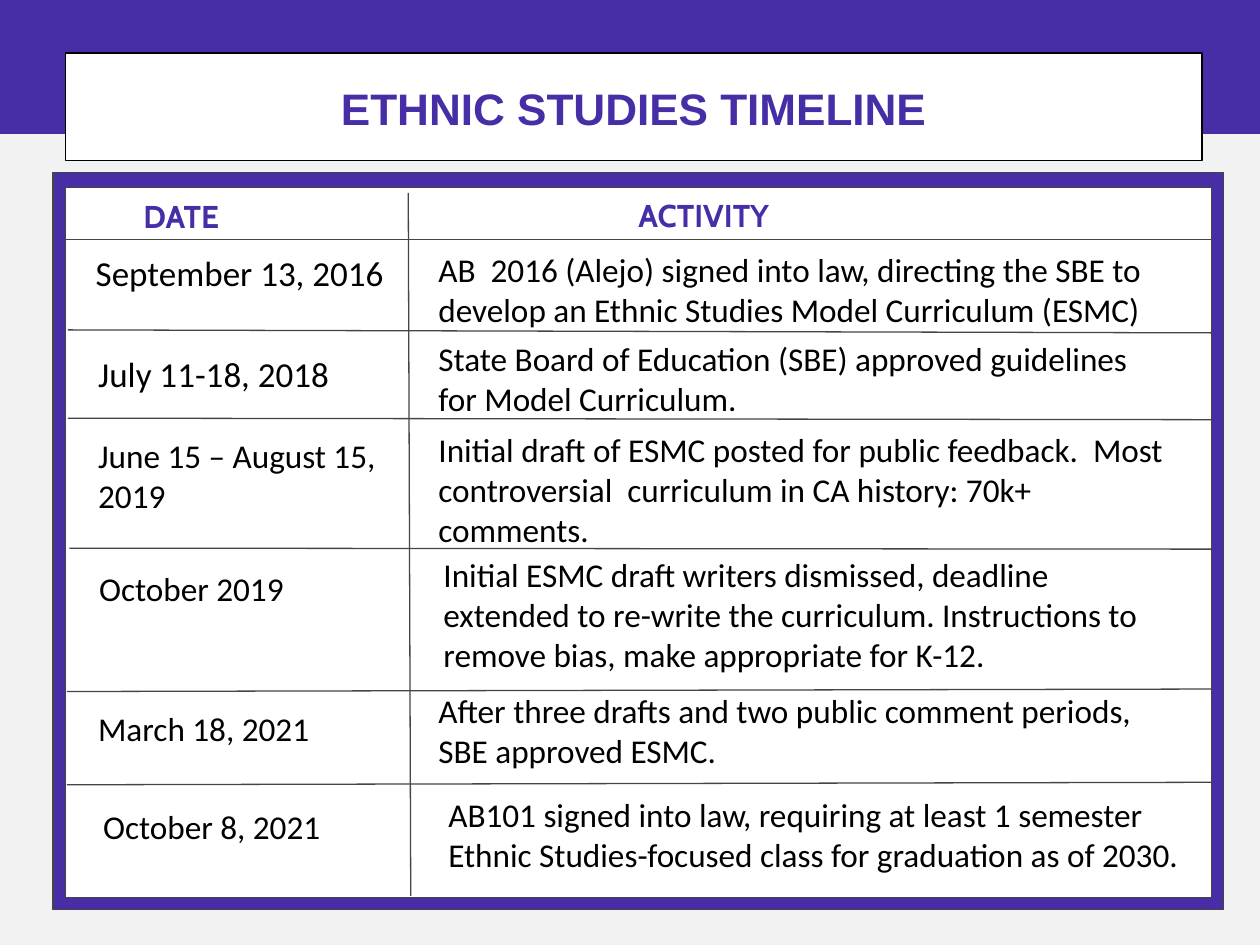
from lxml import etree
from pptx import Presentation
from pptx.dml.color import RGBColor
from pptx.enum.shapes import MSO_CONNECTOR, MSO_SHAPE
from pptx.enum.text import MSO_ANCHOR, MSO_AUTO_SIZE, PP_ALIGN
from pptx.oxml.ns import qn
from pptx.util import Cm, Pt

RECTANGLE = MSO_SHAPE.RECTANGLE
STRAIGHT = MSO_CONNECTOR.STRAIGHT
TOP, MIDDLE = MSO_ANCHOR.TOP, MSO_ANCHOR.MIDDLE
LEFT, CENTER = PP_ALIGN.LEFT, PP_ALIGN.CENTER
NO_FIT = MSO_AUTO_SIZE.NONE

PURPLE, GRAY, PALE = "472EA7", "454545", "F2F2F2"
WHITE, BLACK = "FFFFFF", "000000"
TITLE_ONLY = 5
LINE_HEIGHT = 0.84

# Date, its left, top, width and size; activity, its left, top, width and height
ROWS = [
    ("September 13, 2016", (1.68, 4.83, 6.63), 20,
     "AB  2016 (Alejo) signed into law, directing the SBE to develop "
     "an Ethnic Studies Model Curriculum (ESMC)", (8.59, 4.78, 15.42, LINE_HEIGHT)),
    ("July 11-18, 2018", (1.73, 6.86, 6.27), 20,
     "State Board of Education (SBE) approved guidelines for Model Curriculum.",
     (8.59, 6.58, 14.76, LINE_HEIGHT)),
    ("June 15 – August 15, 2019", (1.73, 8.53, 6.27), 19,
     "Initial draft of ESMC posted for public feedback.  Most controversial  "
     "curriculum in CA history: 70k+ comments.", (8.59, 8.41, 15.42, LINE_HEIGHT)),
    ("October 2019", (1.75, 11.2, 6.27), 19,
     "Initial ESMC draft writers dismissed, deadline extended to re-write the "
     "curriculum. Instructions to remove bias, make appropriate for K-12.",
     (8.69, 10.92, 15.19, 3.05)),
    ("March 18, 2021", (1.73, 14.02, 6.27), 19,
     "After three drafts and two public comment periods, SBE approved ESMC.",
     (8.59, 13.67, 14.76, 2.16)),
    ("October 8, 2021", (1.83, 16.0, 5.72), 19,
     "AB101 signed into law, requiring at least 1 semester Ethnic Studies-focused "
     "class for graduation as of 2030.", (8.79, 15.77, 15.42, 2.16)),
]

# Start and end of the column rule, then of the row rules
RULES = [
    (8.23, 3.89, 8.28, 18.06),
    (1.37, 6.65, 24.41, 6.71),
    (1.37, 8.43, 24.41, 8.46),
    (1.4, 11.05, 24.43, 11.07),
    (1.35, 13.94, 24.46, 13.89),
    (1.35, 15.82, 24.46, 15.77),
]


def color(value):
    return RGBColor.from_string(value)


def write(frame, text, size=19, font="Calibri", ink=BLACK, bold=False,
          align=LEFT, anchor=TOP, spacing=1.0, insets=(0.25, 0.25, 0.25, 0.25)):
    frame.word_wrap = True
    frame.auto_size = NO_FIT
    frame.vertical_anchor = anchor
    (frame.margin_left, frame.margin_top,
     frame.margin_right, frame.margin_bottom) = map(Cm, insets)
    para = frame.paragraphs[0]
    para.alignment = align
    para.line_spacing = spacing
    span = para.add_run()
    span.text = text
    span.font.size = Pt(size)
    span.font.name = font
    span.font.bold = bold
    span.font.color.rgb = color(ink)


class SlideBuilder:
    def __init__(self, page, line_width=0.75):
        self.page = page
        self.line_width = line_width

    def background(self, fill):
        self.page.background.fill.solid()
        self.page.background.fill.fore_color.rgb = color(fill)

    def paint(self, shape, fill, line):
        shape.fill.solid()
        shape.fill.fore_color.rgb = color(fill)
        shape.line.color.rgb = color(line)
        shape.line.width = Pt(self.line_width)

    def title(self, text, place, fill, line, **style):
        box = self.page.shapes.title
        box.left, box.top, box.width, box.height = map(Cm, place)
        self.paint(box, fill, line)
        write(box.text_frame, text, **style)
        # Bring the title in front of what is drawn so far
        box.element.getparent().append(box.element)

    def panel(self, place, fill, line):
        shape = self.page.shapes.add_shape(RECTANGLE, *map(Cm, place))
        shape.shadow.inherit = False
        self.paint(shape, fill, line)

    def text(self, text, place, **style):
        box = self.page.shapes.add_textbox(*map(Cm, place))
        write(box.text_frame, text, **style)

    def rule(self, ends, line):
        connector = self.page.shapes.add_connector(STRAIGHT, *map(Cm, ends))
        connector.line.color.rgb = color(line)
        connector.line.width = Pt(self.line_width)
        properties = connector.element.find(qn("p:spPr"))
        etree.SubElement(properties, qn("a:effectLst"))


def main():
    deck = Presentation()
    deck.slide_width, deck.slide_height = Cm(25.4), Cm(19.05)
    page = deck.slides.add_slide(deck.slide_layouts[TITLE_ONLY])
    builder = SlideBuilder(page)

    # Top band and title
    builder.background(PALE)
    builder.panel((0, 0, 25.4, 2.69), PURPLE, PURPLE)
    builder.title("ETHNIC STUDIES TIMELINE", (1.32, 1.07, 22.91, 2.16), WHITE, BLACK,
                  size=25.2, font="Arial", ink=PURPLE, bold=True, align=CENTER,
                  anchor=MIDDLE, spacing=0.9, insets=(0.5, 0.7, 0.5, 0.5))

    # Frame and column headings
    heading = {"size": 18, "font": "Cabin", "ink": PURPLE, "bold": True}
    builder.panel((1.07, 3.48, 23.6, 14.86), PURPLE, GRAY)
    builder.panel((1.32, 3.78, 23.11, 1.09), WHITE, GRAY)
    builder.text("DATE", (2.64, 3.73, 3.68, LINE_HEIGHT), **heading)
    builder.text("ACTIVITY", (12.62, 3.71, 6.63, LINE_HEIGHT), **heading)

    # Timeline rows
    builder.panel((1.32, 4.83, 23.11, 13.26), WHITE, GRAY)
    for date, date_place, date_size, activity, activity_place in ROWS:
        builder.text(date, (*date_place, LINE_HEIGHT), size=date_size)
        builder.text(activity, activity_place)

    # Column and row rules
    for ends in RULES:
        builder.rule(ends, GRAY)

    deck.save("out.pptx")


if __name__ == "__main__":
    main()
